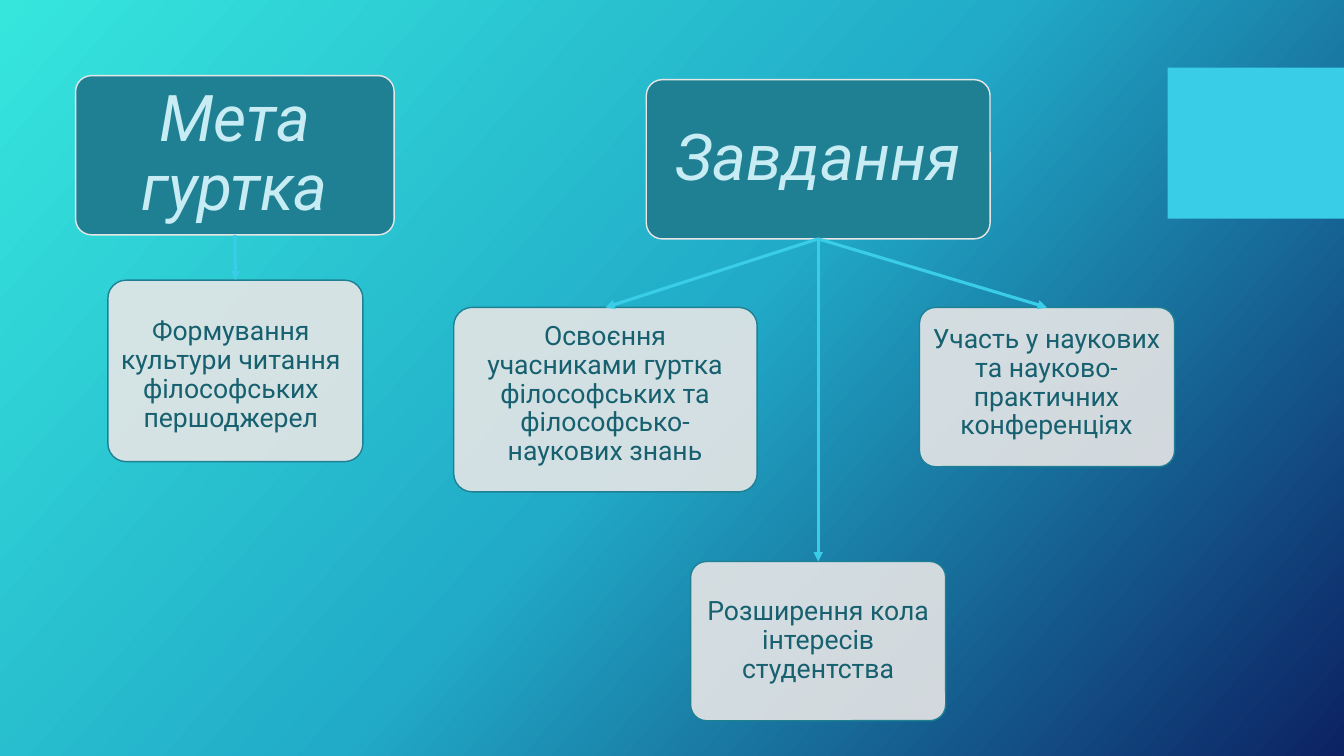
"""Slide with the aim and the tasks of a philosophy reading circle."""
from copy import deepcopy

from pptx import Presentation
from pptx.dml.color import RGBColor
from pptx.enum.shapes import MSO_CONNECTOR, MSO_SHAPE
from pptx.enum.text import MSO_ANCHOR, PP_ALIGN
from pptx.oxml.ns import qn
from pptx.oxml.xmlchemy import OxmlElement
from pptx.util import Inches, Pt

COLORS = {
    "sky_start": "36E6DD", "sky_middle": "21ABC8", "sky_end": "0C2263",
    "accent": "39CDE7", "teal": "1F8094", "pale": "E7E6E6",
    "heading_text": "C8ECF4", "goal_text": "17606F",
}
BOTTOM, TOP = 2, 0


def rgb(name):
    return RGBColor.from_string(COLORS[name])


def add_box(slide, place, margins, text, size, fill, line, ink, italic):
    box = slide.shapes.add_shape(
        MSO_SHAPE.ROUNDED_RECTANGLE, *[Inches(length) for length in place])
    box.adjustments[0] = 0.1
    box.shadow.inherit = False
    box.fill.solid()
    box.fill.fore_color.rgb = rgb(fill)
    box.line.color.rgb = rgb(line)
    box.line.width = Pt(1)
    frame = box.text_frame
    frame.word_wrap = True
    frame.vertical_anchor = MSO_ANCHOR.MIDDLE
    (frame.margin_left, frame.margin_top,
     frame.margin_right, frame.margin_bottom) = [Inches(m) for m in margins]
    paragraph = frame.paragraphs[0]
    paragraph.alignment = PP_ALIGN.CENTER
    paragraph.line_spacing = 0.9
    run = paragraph.add_run()
    run.text = text
    run.font.name = "Roboto"
    run.font.size = Pt(size)
    run.font.italic = italic
    run.font.color.rgb = rgb(ink)
    return box


prs = Presentation()
prs.slide_width, prs.slide_height = Inches(13.33), Inches(7.5)
slide = prs.slides.add_slide(prs.slide_layouts[6])

sky = slide.background.fill
sky.gradient()
sky.gradient_angle = 360 - 42
stop_list = slide.background._cSld.find(".//" + qn("a:gsLst"))
stop_list.append(deepcopy(stop_list[-1]))
for index, name in enumerate(("sky_start", "sky_middle", "sky_end")):
    sky.gradient_stops[index].position = index / 2
    sky.gradient_stops[index].color.rgb = rgb(name)

corner_tab = slide.shapes.add_shape(
    MSO_SHAPE.RECTANGLE, Inches(11.58), Inches(0.67), Inches(1.75), Inches(1.5))
corner_tab.shadow.inherit = False
corner_tab.fill.solid()
corner_tab.fill.fore_color.rgb = rgb("accent")
corner_tab.line.fill.background()

branches = [
    ("Мета гуртка", (0.75, 0.75, 3.16, 1.58), [
        ("Формування культури читання філософських першоджерел",
         (1.07, 2.78, 2.53, 1.8), (0, 0.09, 0.09, 0)),
    ]),
    ("Завдання", (6.41, 0.79, 3.41, 1.58), [
        ("Освоєння учасниками гуртка філософських та філософсько-наукових знань",
         (4.5, 3.05, 3.01, 1.83), (0.09, 0, 0.1, 0.1)),
        ("Участь у наукових та науково-практичних конференціях",
         (9.12, 3.05, 2.53, 1.58), (0.04, 0, 0.05, 0.08)),
        ("Розширення кола інтересів студентства",
         (6.85, 5.57, 2.53, 1.58), (0.04, 0.04, 0.04, 0.04)),
    ]),
]

for heading, heading_place, goals in branches:
    heading_box = add_box(slide, heading_place, (0.1, 0.06, 0.1, 0.06), heading,
                          46, "teal", "pale", "heading_text", True)
    for goal, goal_place, margins in goals:
        goal_box = add_box(slide, goal_place, margins, goal,
                           19, "pale", "teal", "goal_text", False)
        alpha = OxmlElement("a:alpha")
        alpha.set("val", "90000")
        goal_box._element.spPr.find(
            qn("a:solidFill") + "/" + qn("a:srgbClr")).append(alpha)

        arrow = slide.shapes.add_connector(MSO_CONNECTOR.STRAIGHT, 0, 0, 0, 0)
        arrow.begin_connect(heading_box, BOTTOM)
        arrow.end_connect(goal_box, TOP)
        arrow.line.color.rgb = rgb("accent")
        arrow.line.width = Pt(2.25)
        tip = OxmlElement("a:tailEnd")
        tip.set("type", "triangle")
        arrow.line._get_or_add_ln().append(tip)
        arrow._element.spPr.append(OxmlElement("a:effectLst"))

prs.save("out.pptx")
